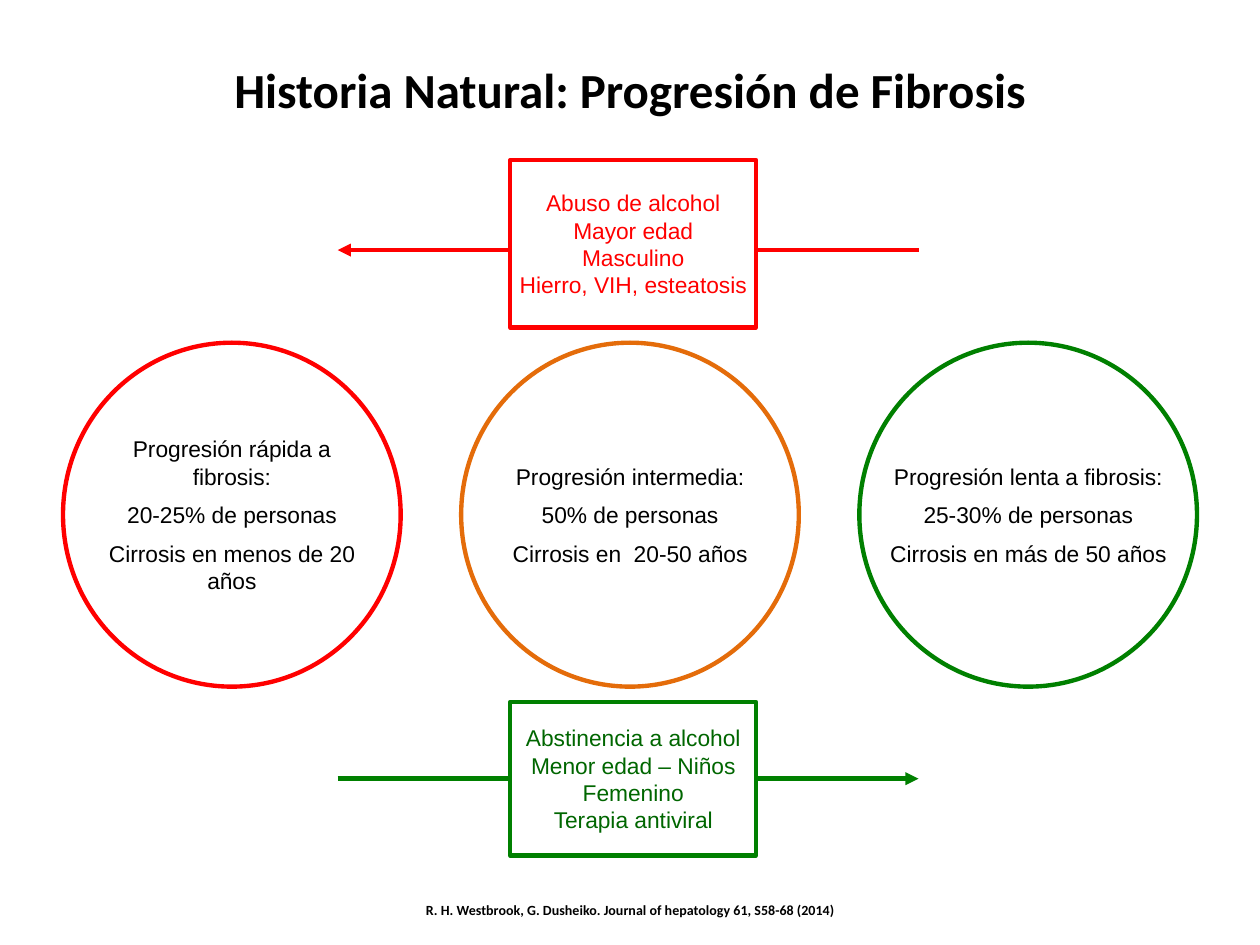
from lxml.etree import SubElement
from pptx import Presentation
from pptx.dml.color import RGBColor
from pptx.enum.shapes import MSO_CONNECTOR as CONN, MSO_SHAPE as SHAPE
from pptx.enum.text import MSO_ANCHOR as ANCHOR, PP_ALIGN as ALIGN
from pptx.oxml.ns import qn
from pptx.util import Inches, Pt

BLACK, WHITE = RGBColor(0, 0, 0), RGBColor(255, 255, 255)
RED, ORANGE = RGBColor(255, 0, 0), RGBColor(0xE4, 0x6C, 0x0A)
GREEN, DARK_GREEN = RGBColor(0, 0x80, 0), RGBColor(0, 0x66, 0)

# Content
TITLE = "Historia Natural: Progresión de Fibrosis"
SOURCE = "R. H. Westbrook, G. Dusheiko. Journal of hepatology 61, S58-68 (2014)"
# Courses of the disease: outline, text width, lines
COURSES = [
    (RED, 2.2, ["Progresión rápida a fibrosis:", "20-25% de personas",
                "Cirrosis en menos de 20 años"]),
    (ORANGE, 2.2, ["Progresión intermedia:", "50% de personas",
                   "Cirrosis en  20-50 años"]),
    (GREEN, 2.52, ["Progresión lenta a fibrosis:", "25-30% de personas",
                   "Cirrosis en más de 50 años"]),
]
# Factors: outline, text colour, top, height, points left, lines
FACTORS = [
    (RED, RED, 1.27, 1.33, True,
     ["Abuso de alcohol", "Mayor edad", "Masculino", "Hierro, VIH, esteatosis"]),
    (GREEN, DARK_GREEN, 5.57, 1.22, False,
     ["Abstinencia a alcohol", "Menor edad – Niños", "Femenino", "Terapia antiviral"]),
]

# Layout, in inches
WIDTH, HEIGHT, MARGIN = 10, 7.5, 0.5
CIRCLE_W, CIRCLE_H, CIRCLE_TOP = 2.68, 2.73, 2.72
PITCH = (WIDTH - 2 * MARGIN - CIRCLE_W) / (len(COURSES) - 1)
BOX_LEFT, BOX_W = 4.05, 1.95
ARROW_LEFT, ARROW_RIGHT = 2.68, 7.29
LINE_W = Pt(2.5)


def write(tf, lines, size=13, font="Arial", color=BLACK, bold=False,
          before=0, anchor=ANCHOR.MIDDLE, wrap=True):
    tf.word_wrap, tf.vertical_anchor = wrap, anchor
    for i, line in enumerate(lines):
        p = tf.add_paragraph() if i else tf.paragraphs[0]
        p.alignment, p.space_before = ALIGN.CENTER, Pt(before)
        r = p.add_run()
        r.text = line
        r.font.size, r.font.name, r.font.bold = Pt(size), font, bold
        r.font.color.rgb = color


def add_outlined(shapes, kind, color, *box):
    sp = shapes.add_shape(kind, *map(Inches, box))
    sp.shadow.inherit = False
    sp.fill.solid()
    sp.fill.fore_color.rgb = WHITE
    sp.line.color.rgb, sp.line.width = color, LINE_W
    return sp


def add_arrow(shapes, color, start, end, y):
    cx = shapes.add_connector(CONN.STRAIGHT, *map(Inches, (start, y, end, y)))
    cx.line.color.rgb, cx.line.width = color, LINE_W
    SubElement(cx.line._get_or_add_ln(), qn("a:tailEnd"), type="triangle")
    SubElement(cx._element.spPr, qn("a:effectLst"))


def main():
    prs = Presentation()
    prs.slide_width, prs.slide_height = Inches(WIDTH), Inches(HEIGHT)
    slide = prs.slides.add_slide(prs.slide_layouts[5])
    shapes = slide.shapes

    # Title
    title = shapes.title
    title.left, title.top = Inches(MARGIN), Inches(0.08)
    title.width, title.height = Inches(WIDTH - 2 * MARGIN), Inches(1.25)
    write(title.text_frame, [TITLE], size=28, font="Calibri", bold=True)

    # Circles with their texts centred on them
    for i, (color, text_w, lines) in enumerate(COURSES):
        left = MARGIN + i * PITCH
        add_outlined(shapes, SHAPE.OVAL, color, left, CIRCLE_TOP, CIRCLE_W, CIRCLE_H)
        text_h = 1.41 if i == 0 else 0.98
        tb = shapes.add_textbox(Inches(left + (CIRCLE_W - text_w) / 2),
                                Inches(CIRCLE_TOP + (CIRCLE_H - text_h) / 2),
                                Inches(text_w), Inches(text_h))
        write(tb.text_frame, lines, before=6.5)

    # Factor boxes, each over its arrow
    for color, text_color, top, height, to_left, lines in FACTORS:
        ends = (ARROW_RIGHT, ARROW_LEFT) if to_left else (ARROW_LEFT, ARROW_RIGHT)
        add_arrow(shapes, color, *ends, top + height / 2 + (0.05 if to_left else 0))
        box = add_outlined(shapes, SHAPE.RECTANGLE, color, BOX_LEFT, top, BOX_W, height)
        write(box.text_frame, lines, color=text_color, wrap=False)

    # Source
    tb = shapes.add_textbox(Inches(2.82), Inches(7.11), Inches(4.37), Inches(0.24))
    write(tb.text_frame, [SOURCE], size=8, font="Calibri", bold=True, anchor=ANCHOR.TOP)

    prs.save("out.pptx")


if __name__ == "__main__":
    main()
